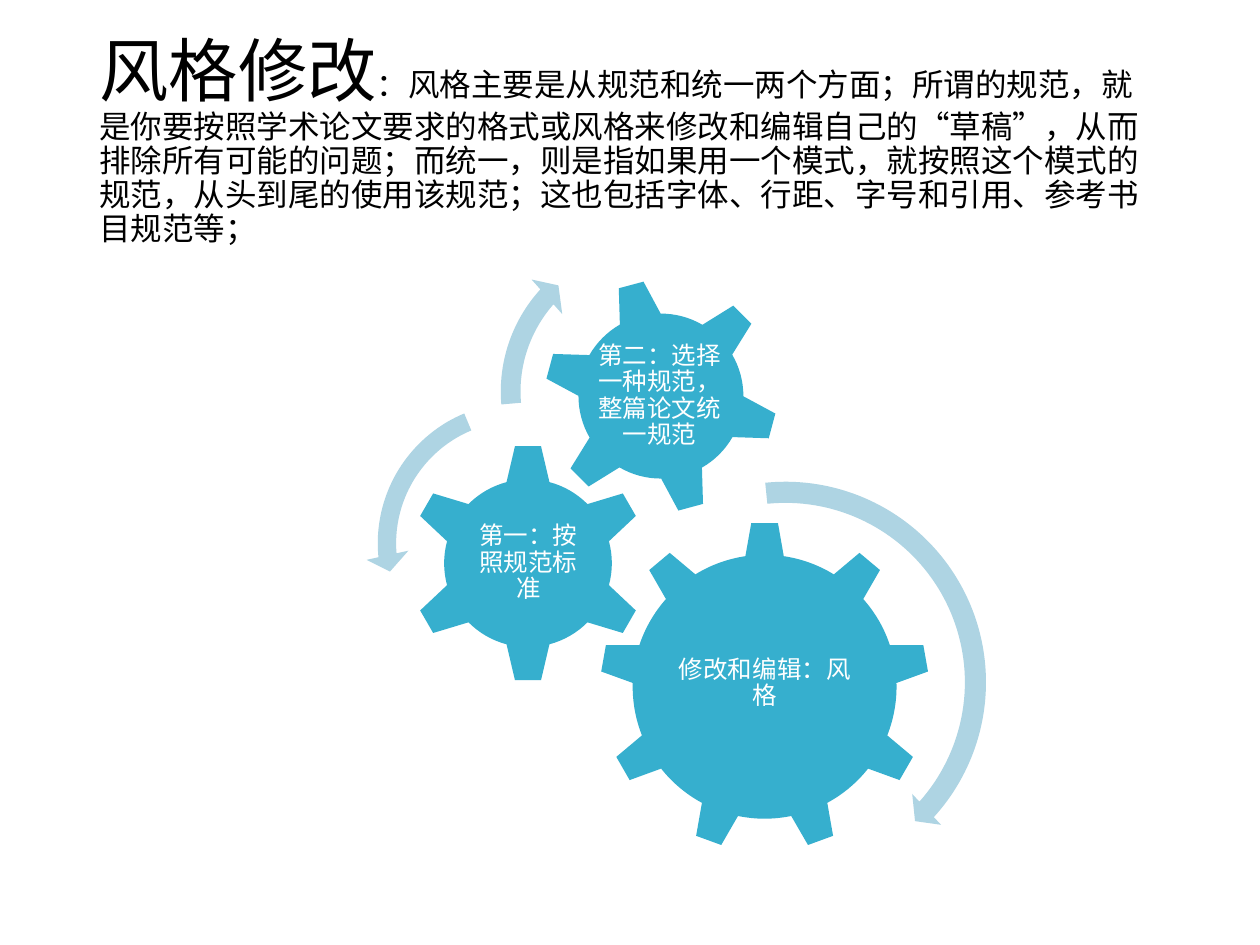
from pptx import Presentation
from pptx.dml.color import RGBColor
from pptx.enum import shapes, text
from pptx.util import Cm, Pt

HUES = {"ink": "000000", "gear": "36AFCE", "arrow": "AED4E3", "label": "FFFFFF"}
FONT = "Times New Roman"
KIND = shapes.MSO_SHAPE


def add_part(kind, left, top, size, hue):
    """Add a square, unoutlined preset shape to the gear group."""
    part = group.shapes.add_shape(kind, Cm(left), Cm(top), Cm(size), Cm(size))
    part.shadow.inherit = False
    part.fill.solid()
    part.fill.fore_color.rgb = RGBColor.from_string(HUES[hue])
    part.line.fill.background()
    return part


def style(para, size, hue, align):
    para.alignment = align
    para.line_spacing = 0.9
    para.font.name = FONT
    para.font.size = Pt(size)
    para.font.color.rgb = RGBColor.from_string(HUES[hue])


deck = Presentation()
deck.slide_width, deck.slide_height = Cm(25.4), Cm(19.05)
slide = deck.slides.add_slide(deck.slide_layouts[5])

# Title: a large heading that runs on into the explanation
title = slide.shapes.title
title.left, title.top, title.width, title.height = Cm(1.75), Cm(1.02), Cm(21.89), Cm(3.68)
frame = title.text_frame
frame.word_wrap = True
frame.auto_size = text.MSO_AUTO_SIZE.NONE
frame.vertical_anchor = text.MSO_ANCHOR.MIDDLE
para = frame.paragraphs[0]
style(para, 18, "ink", text.PP_ALIGN.LEFT)
head = para.add_run()
head.text = "风格修改"
head.font.size = Pt(39.6)
para.add_run().text = (
    "：风格主要是从规范和统一两个方面；所谓的规范，就是你要按照学术论文要求的格式或风格来修改和编辑自己的“草稿”，"
    "从而排除所有可能的问题；而统一，则是指如果用一个模式，就按照这个模式的规范，从头到尾的使用该规范；"
    "这也包括字体、行距、字号和引用、参考书目规范等；"
)

group = slide.shapes.add_group_shape()

# Gears: kind, left, top, size, turn, label box, label
gears = [
    (KIND.GEAR_9, 12.09, 10.52, 6.65, 0, (13.44, 12.07, 3.96, 3.43), "修改和编辑：风格"),
    (KIND.GEAR_6, 8.23, 8.94, 4.83, 0, (9.45, 10.16, 2.41, 2.39), "第一：按照规范标准"),
    (KIND.GEAR_6, 10.95, 5.61, 4.75, 345, (11.96, 6.65, 2.67, 2.67),
     "第二：选择一种规范，整篇论文统一规范"),
]
for kind, left, top, size, turn, box, words in gears:
    add_part(kind, left, top, size, "gear").rotation = turn
    label = group.shapes.add_textbox(*map(Cm, box))
    frame = label.text_frame
    frame.word_wrap = True
    frame.vertical_anchor = text.MSO_ANCHOR.MIDDLE
    frame.margin_left = frame.margin_right = Cm(0.05)
    frame.margin_top = frame.margin_bottom = Cm(0.05)
    frame.text = words
    style(frame.paragraphs[0], 14, "label", text.PP_ALIGN.CENTER)

# Arrows: kind, left, top, size, adjustments
arrows = [
    (KIND.CIRCULAR_ARROW, 11.58, 9.5, 8.51, (0.05, 2.99, 25.2, 158.53, 0.05)),
    (KIND.LEFT_CIRCULAR_ARROW, 7.37, 7.87, 6.17, (0.06, 4.3, 104.89, 148.38, 0.07)),
    (KIND.CIRCULAR_ARROW, 9.83, 4.57, 6.65, (0.06, 3.94, 133.14, 105.08, 0.07)),
]
for kind, left, top, size, bends in arrows:
    arrow = add_part(kind, left, top, size, "arrow")
    for i, bend in enumerate(bends):
        arrow.adjustments[i] = bend

deck.save("out.pptx")
